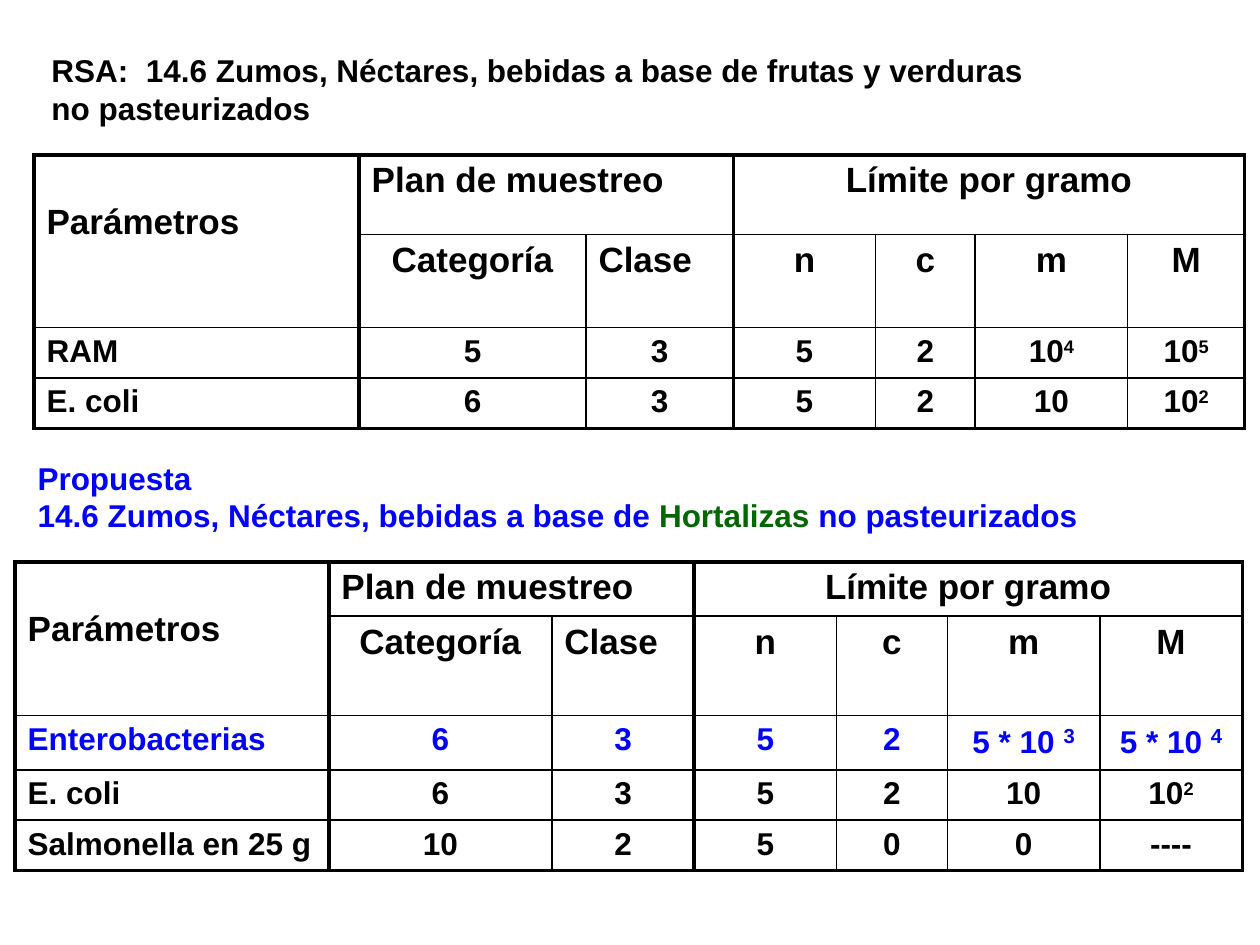
from lxml.etree import SubElement
from pptx import Presentation
from pptx.dml.color import RGBColor
from pptx.enum.text import MSO_AUTO_SIZE, PP_ALIGN
from pptx.oxml.ns import qn
from pptx.util import Inches, Pt

THEME = {
    "font": "Arial", "head": 20, "body": 18, "thin": 1, "thick": 2.25,
    "black": "000000", "blue": "0000FF", "green": "006600",
    "grid": "{2D5ABB26-0587-4C30-8999-92F81FD0307C}",
}

HEAD = [
    ["Parámetros", "Plan de muestreo", "", "Límite por gramo", "", "", ""],
    ["", "Categoría", "Clase", "n", "c", "m", "M"],
]
SPANS = [(0, 0, 1, 0), (0, 1, 0, 2), (0, 3, 0, 6)]
THICK = {0, 1, 3, 7}
LEFT = {(0, 0), (0, 1), (1, 2)}

TABLES = [
    {
        "at": (0.27, 1.23),
        "cols": [2.58, 1.8, 1.17, 1.13, 0.79, 1.21, 0.93],
        "rows": [0.63, 0.74, 0.4, 0.4],
        "data": [
            ["RAM", "5", "3", "5", "2", "10^4", "10^5"],
            ["E. coli", "6", "3", "5", "2", "10", "10^2"],
        ],
        "new": None,
    },
    {
        "at": (0.12, 4.46),
        "cols": [2.49, 1.77, 1.13, 1.13, 0.88, 1.21, 1.13],
        "rows": [0.43, 0.79, 0.43, 0.4, 0.4],
        "data": [
            ["Enterobacterias", "6", "3", "5", "2", "5 * 10 ^3", "5 * 10 ^4"],
            ["E. coli", "6", "3", "5", "2", "10", "10^2"],
            ["Salmonella en 25 g", "10", "2", "5", "0", "0", "----"],
        ],
        "new": 2,
    },
]

TEXTS = [
    ((0.31, 0.36, 8.21, 0.7), [
        [("RSA:  14.6 Zumos, Néctares, bebidas a base de frutas y verduras "
          "no pasteurizados", "black")],
    ]),
    ((0.2, 3.59, 8.7, 0.71), [
        [("Propuesta", "blue")],
        [("14.6 Zumos, Néctares, bebidas a base de ", "blue"),
         ("Hortalizas ", "green"), ("no pasteurizados", "blue")],
    ]),
]


def add_run(para, text, size, ink, power=False):
    run = para.add_run()
    run.text = text
    font = run.font
    font.name, font.size, font.bold = THEME["font"], Pt(size), True
    font.color.rgb = RGBColor.from_string(THEME[ink])
    if power:
        run._r.get_or_add_rPr().set("baseline", "30000")


def add_text(slide, place, paras):
    box = slide.shapes.add_textbox(*map(Inches, place))
    frame = box.text_frame
    frame.word_wrap = True
    frame.auto_size = MSO_AUTO_SIZE.SHAPE_TO_FIT_TEXT
    for i, runs in enumerate(paras):
        para = frame.add_paragraph() if i else frame.paragraphs[0]
        for text, ink in runs:
            add_run(para, text, THEME["body"], ink)


def get_span(row, col):
    for top, left, low, right in SPANS:
        if top <= row <= low and left <= col <= right:
            return top, left, low, right
    return row, col, row, col


def draw_lines(cell, row, col, count):
    top, left, low, right = get_span(row, col)
    first = (row, col) == (top, left)
    sides = [
        ("a:lnL", first or col == left, left in THICK),
        ("a:lnR", first or col == right, right + 1 in THICK),
        ("a:lnT", first or row == top, top == 0),
        ("a:lnB", first or row == low, low + 1 == count),
    ]
    props = cell._tc.get_or_add_tcPr()
    for tag, show, bold in sides:
        if show:
            wide = Pt(THEME["thick" if bold else "thin"])
            line = SubElement(props, qn(tag), w=str(wide))
            fill = SubElement(line, qn("a:solidFill"))
            SubElement(fill, qn("a:srgbClr"), val=THEME["black"])


def fill_cell(cell, text, row, col, new):
    size = THEME["head" if row < len(HEAD) else "body"]
    ink = "blue" if row == new else "black"
    para = cell.text_frame.paragraphs[0]
    side = col == 0 or (row, col) in LEFT
    para.alignment = PP_ALIGN.LEFT if side else PP_ALIGN.CENTER
    base, _, power = text.partition("^")
    add_run(para, base, size, ink)
    if power:
        add_run(para, power, THEME["head"] if row == new else size, ink, True)


def add_grid(slide, spec):
    cols, rows = spec["cols"], spec["rows"]
    place = (*spec["at"], sum(cols), sum(rows))
    frame = slide.shapes.add_table(len(rows), len(cols), *map(Inches, place))
    table = frame.table
    table.first_row = table.horz_banding = False
    table._tbl.tblPr.find(qn("a:tableStyleId")).text = THEME["grid"]
    for col, wide in zip(table.columns, cols):
        col.width = Inches(wide)
    for row, high in zip(table.rows, rows):
        row.height = Inches(high)
    for top, left, low, right in SPANS:
        table.cell(top, left).merge(table.cell(low, right))
    for r, line in enumerate(HEAD + spec["data"]):
        for c, text in enumerate(line):
            cell = table.cell(r, c)
            draw_lines(cell, r, c, len(rows))
            cell.fill.background()
            if text:
                fill_cell(cell, text, r, c, spec["new"])
    table.cell(0, 0).margin_top = Inches(0.38)


def main():
    deck = Presentation()
    deck.slide_width, deck.slide_height = Inches(10), Inches(7.5)
    slide = deck.slides.add_slide(deck.slide_layouts[6])
    for spec in TABLES:
        add_grid(slide, spec)
    for place, paras in TEXTS:
        add_text(slide, place, paras)
    deck.save("out.pptx")


if __name__ == "__main__":
    main()
